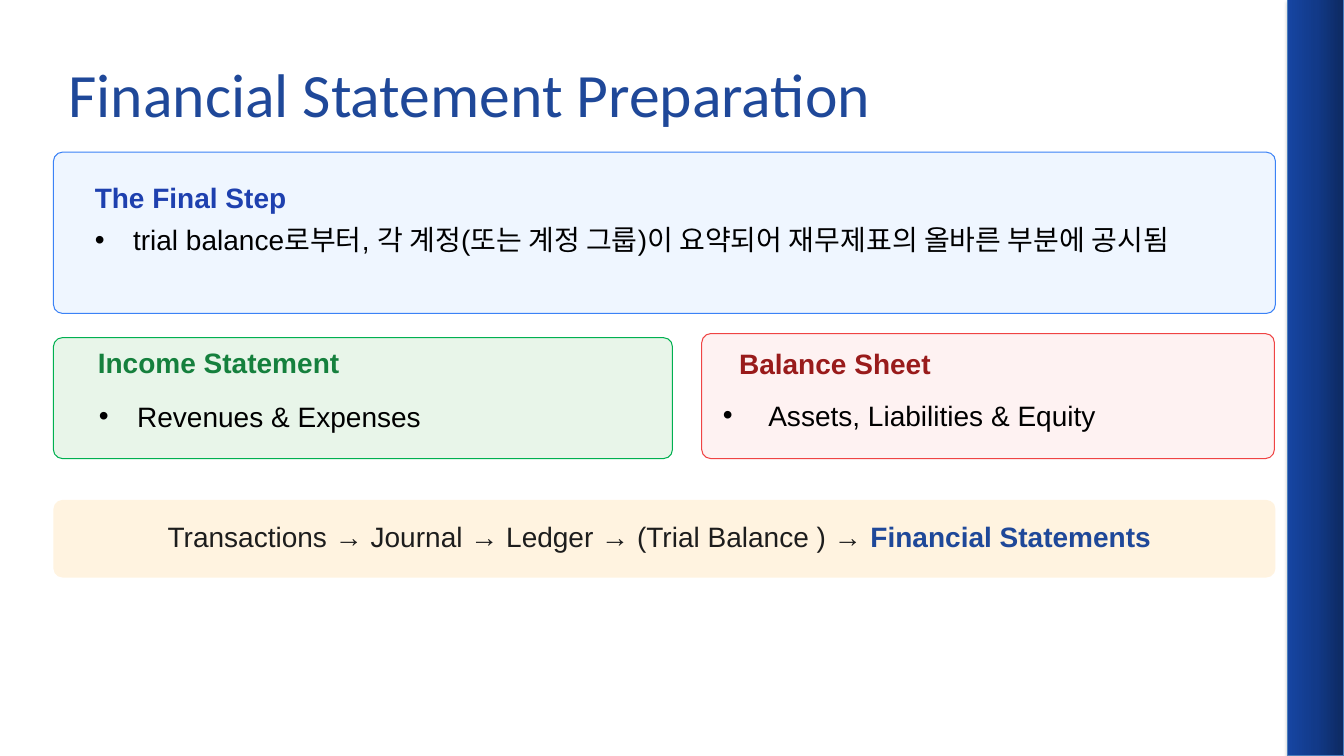
from copy import deepcopy
from dataclasses import dataclass

from lxml import etree
from pptx import Presentation
from pptx.dml.color import RGBColor
from pptx.enum.shapes import MSO_SHAPE
from pptx.enum.text import MSO_ANCHOR, MSO_AUTO_SIZE, PP_ALIGN
from pptx.oxml.ns import qn
from pptx.util import Inches, Pt

RECTANGLE = MSO_SHAPE.RECTANGLE
ROUNDED = MSO_SHAPE.ROUNDED_RECTANGLE
TOP = MSO_ANCHOR.TOP
MIDDLE = MSO_ANCHOR.MIDDLE
NO_AUTOFIT = MSO_AUTO_SIZE.NONE
LEFT = PP_ALIGN.LEFT
CENTER = PP_ALIGN.CENTER

SLIDE_WIDTH, SLIDE_HEIGHT = 13.33, 7.5
COMPARISON_LAYOUT = 4
NAVY, BLACK = "1F4899", "000000"
CORNER_RADIUS = 0.09


@dataclass
class Box:
    left: float
    top: float
    width: float
    height: float


@dataclass
class Panel:
    box: Box
    fill: str
    line: str | None = None


@dataclass
class Run:
    text: str
    color: str
    bold: bool = False
    size: float = 20
    font: str = "Arial"


@dataclass
class Paragraph:
    runs: list[Run]
    spacing: float = 30
    hanging: float = 0
    alignment: PP_ALIGN = LEFT


@dataclass
class TextBlock:
    box: Box
    paragraphs: list[Paragraph]
    placeholder: int | None = None


PANELS = [
    Panel(Box(6.96, 3.31, 5.68, 1.24), "FEF2F2", "EF4444"),
    Panel(Box(0.53, 1.51, 12.12, 1.6), "EFF6FF", "3B82F6"),
    Panel(Box(0.53, 3.35, 6.14, 1.2), "E8F5E9", "00B050"),
    Panel(Box(0.53, 4.96, 12.12, 0.77), "FFF3E0"),
]

BLOCKS = [
    TextBlock(Box(0.94, 1.71, 11.47, 1.4), [
        Paragraph([Run("The Final Step", "1E40AF", True)]),
        Paragraph([Run("trial balance로부터, 각 계정(또는 계정 그룹)이 요약되어 "
                       "재무제표의 올바른 부분에 공시됨", BLACK)], hanging=0.38),
    ]),
    TextBlock(Box(0.97, 3.43, 4.94, 0.39), [
        Paragraph([Run("Income Statement", "15803D", True)], 24),
    ], 1),
    TextBlock(Box(0.98, 3.88, 5.3, 0.57), [
        Paragraph([Run("Revenues & Expenses", BLACK)], hanging=0.38),
    ], 2),
    TextBlock(Box(7.33, 3.46, 4.69, 0.35), [
        Paragraph([Run("Balance Sheet", "991B1B", True)], 22.4),
    ], 3),
    TextBlock(Box(7.17, 3.87, 4.07, 0.5), [
        Paragraph([Run("Assets, Liabilities & Equity", BLACK)], hanging=0.45),
    ], 4),
    TextBlock(Box(0.88, 5.09, 11.32, 0.63), [
        Paragraph([
            Run("Transactions → Journal → Ledger → (Trial Balance ) → ", "1D1D1D"),
            Run("Financial Statements", NAVY, True),
        ], 28.8, alignment=CENTER),
    ]),
]


def rgb(color: str) -> RGBColor:
    return RGBColor.from_string(color)


def lengths(box: Box) -> list[int]:
    return [Inches(value) for value in (box.left, box.top, box.width, box.height)]


def place(shape, box: Box) -> None:
    shape.left, shape.top, shape.width, shape.height = lengths(box)


def add_run(paragraph, item: Run) -> None:
    run = paragraph.add_run()
    run.text = item.text
    run.font.name = item.font
    run.font.size = Pt(item.size)
    run.font.bold = item.bold
    run.font.color.rgb = rgb(item.color)


def add_bullet(paragraph, hanging: float) -> None:
    properties = paragraph._p.get_or_add_pPr()
    properties.set("marL", str(Inches(hanging)))
    properties.set("indent", str(-Inches(hanging)))
    etree.SubElement(properties, qn("a:buFont"), typeface="Arial")
    etree.SubElement(properties, qn("a:buChar"), char="•")


def draw_side_bar(slide) -> None:
    bar = slide.shapes.add_shape(RECTANGLE, *lengths(Box(12.77, 0, 0.56, SLIDE_HEIGHT)))
    bar.fill.gradient()
    bar.fill.gradient_angle = 180
    stops = bar.element.find(".//" + qn("a:gsLst"))
    stops.insert(1, deepcopy(stops[0]))
    for stop, position, color in zip(bar.fill.gradient_stops, (0, 0.5, 1),
                                     ("0D2960", "123A89", "1645A2")):
        stop.position = position
        stop.color.rgb = rgb(color)
    bar.line.color.rgb = rgb("4B7EBC")
    bar.line.width = Pt(0.75)
    bar.shadow.inherit = False
    effects = bar.element.find(".//" + qn("a:effectLst"))
    shadow = etree.SubElement(effects, qn("a:outerShdw"), blurRad=str(Pt(3.1)),
                              dist=str(Pt(1.8)), dir="5400000", rotWithShape="0")
    shade = etree.SubElement(shadow, qn("a:srgbClr"), val=BLACK)
    etree.SubElement(shade, qn("a:alpha"), val="35000")


def draw_panel(slide, panel: Panel) -> None:
    shape = slide.shapes.add_shape(ROUNDED, *lengths(panel.box))
    shape.adjustments[0] = CORNER_RADIUS / panel.box.height
    shape.shadow.inherit = False
    shape.fill.solid()
    shape.fill.fore_color.rgb = rgb(panel.fill)
    if panel.line:
        shape.line.color.rgb = rgb(panel.line)
        shape.line.width = Pt(0.75)
    else:
        shape.line.fill.background()


def draw_text(slide, block: TextBlock) -> None:
    if block.placeholder is None:
        shape = slide.shapes.add_textbox(*lengths(block.box))
    else:
        shape = slide.placeholders[block.placeholder]
        place(shape, block.box)
        slide.shapes.element.append(shape.element)
    frame = shape.text_frame
    frame.word_wrap = True
    frame.auto_size = NO_AUTOFIT
    frame.vertical_anchor = TOP
    frame.margin_left = frame.margin_top = frame.margin_right = frame.margin_bottom = 0
    for index, item in enumerate(block.paragraphs):
        paragraph = frame.add_paragraph() if index else frame.paragraphs[0]
        if item.hanging:
            add_bullet(paragraph, item.hanging)
        paragraph.alignment = item.alignment
        paragraph.line_spacing = Pt(item.spacing)
        paragraph.space_before = Pt(0)
        for run in item.runs:
            add_run(paragraph, run)


def draw_title(slide) -> None:
    title = slide.shapes.title
    place(title, Box(0.58, 0.3, 12, 1.25))
    title.text_frame.vertical_anchor = MIDDLE
    paragraph = title.text_frame.paragraphs[0]
    paragraph.alignment = LEFT
    add_run(paragraph, Run("Financial Statement Preparation", NAVY, size=44, font="Calibri"))


def main() -> None:
    presentation = Presentation()
    presentation.slide_width = Inches(SLIDE_WIDTH)
    presentation.slide_height = Inches(SLIDE_HEIGHT)
    slide = presentation.slides.add_slide(presentation.slide_layouts[COMPARISON_LAYOUT])
    draw_side_bar(slide)
    draw_title(slide)
    for panel in PANELS:
        draw_panel(slide, panel)
    for block in BLOCKS:
        draw_text(slide, block)
    presentation.save("out.pptx")


if __name__ == "__main__":
    main()
